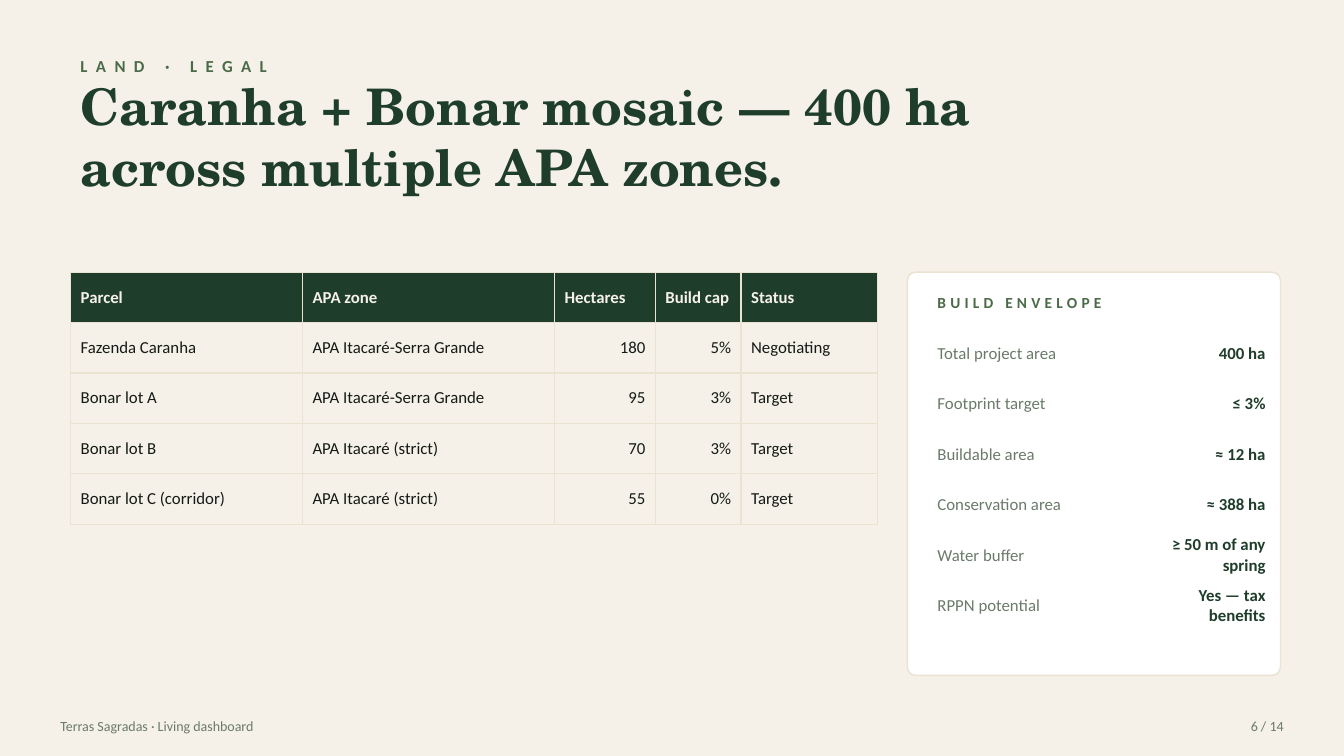
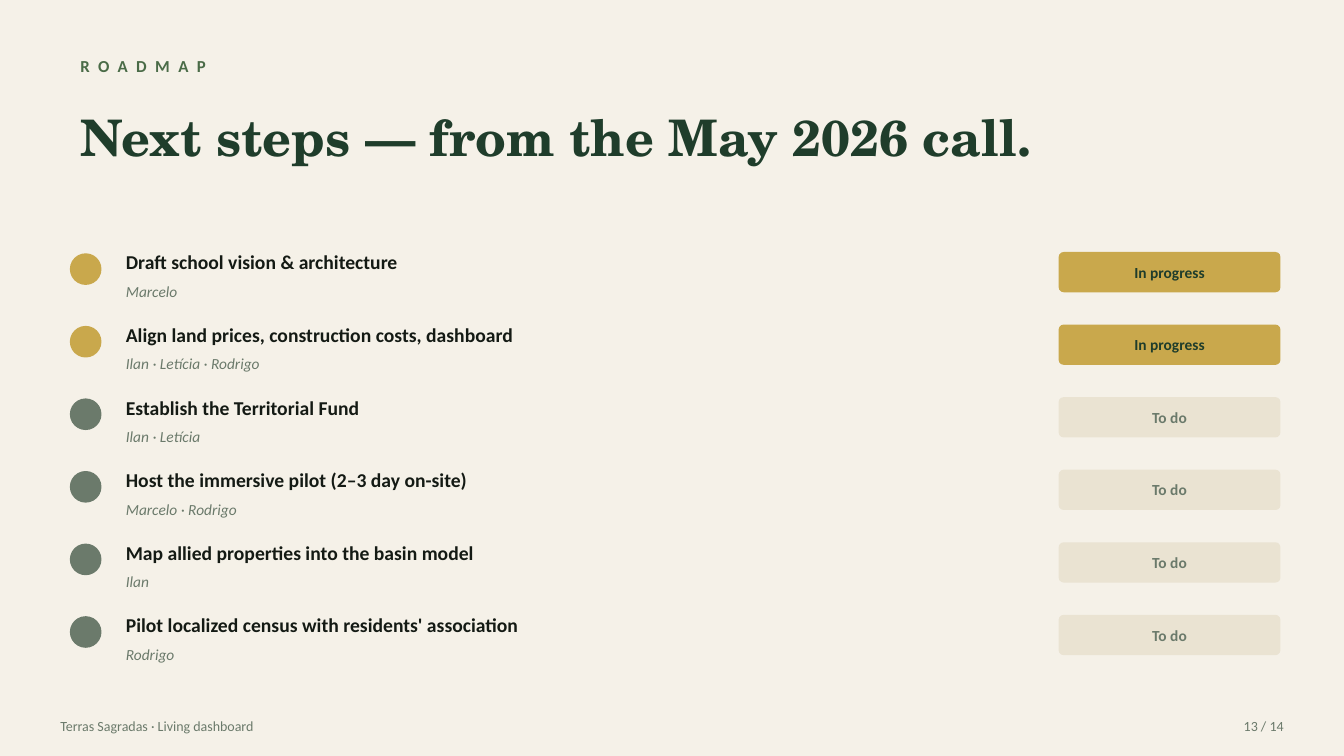
from lxml.etree import SubElement
from pptx import Presentation
from pptx.dml.color import RGBColor
from pptx.enum.shapes import MSO_SHAPE as Shape
from pptx.enum.text import MSO_ANCHOR as Anchor, PP_ALIGN as Align
from pptx.oxml.ns import qn
from pptx.util import Inches, Pt

CREAM, SAND, WHITE = "F5F1E8", "EAE3D2", "FFFFFF"
FOREST, LEAF, SAGE = "1F3D2B", "4A6B47", "6B7A6B"
INK, GOLD = "141A14", "C9A84C"
BODY_FONT, TITLE_FONT = "Calibri", "TeX Gyre Schola"
PAGE_COUNT = 14
LEFT, RIGHT = 0.7, 12.7

PARCEL_WIDTHS = [2.3, 2.5, 1, 0.85, 1.35]
PARCEL_ALIGNS = [Align.LEFT, Align.LEFT, Align.RIGHT, Align.RIGHT, Align.LEFT]
PARCELS = [
    ("Parcel", "APA zone", "Hectares", "Build cap", "Status"),
    ("Fazenda Caranha", "APA Itacaré-Serra Grande", "180", "5%", "Negotiating"),
    ("Bonar lot A", "APA Itacaré-Serra Grande", "95", "3%", "Target"),
    ("Bonar lot B", "APA Itacaré (strict)", "70", "3%", "Target"),
    ("Bonar lot C (corridor)", "APA Itacaré (strict)", "55", "0%", "Target"),
]
ENVELOPE = [
    ("Total project area", "400 ha"),
    ("Footprint target", "≤ 3%"),
    ("Buildable area", "≈ 12 ha"),
    ("Conservation area", "≈ 388 ha"),
    ("Water buffer", "≥ 50 m of any spring"),
    ("RPPN potential", "Yes — tax benefits"),
]
STATUS_COLORS = {
    "In progress": {"dot": GOLD, "pill": GOLD, "label": FOREST},
    "To do": {"dot": SAGE, "pill": SAND, "label": SAGE},
}
STEPS = [
    ("Draft school vision & architecture", "Marcelo", "In progress"),
    ("Align land prices, construction costs, dashboard",
     "Ilan · Letícia · Rodrigo", "In progress"),
    ("Establish the Territorial Fund", "Ilan · Letícia", "To do"),
    ("Host the immersive pilot (2–3 day on-site)", "Marcelo · Rodrigo", "To do"),
    ("Map allied properties into the basin model", "Ilan", "To do"),
    ("Pilot localized census with residents' association", "Rodrigo", "To do"),
]


def rgb(color):
    """Turn a hex string into a colour."""
    return RGBColor.from_string(color)


def paint(target, color):
    """Give a shape, cell or background a solid fill."""
    target.fill.solid()
    target.fill.fore_color.rgb = rgb(color)


def write(frame, text, size=12, color=INK, font=BODY_FONT, bold=False,
          italic=False, align=Align.LEFT, spacing=0):
    """Fill a text frame with one formatted paragraph per line of text."""
    frame.word_wrap = True
    frame.vertical_anchor = Anchor.MIDDLE
    for index, line in enumerate(text.split("\n")):
        paragraph = frame.add_paragraph() if index else frame.paragraphs[0]
        paragraph.alignment = align
        run = paragraph.add_run()
        run.text = line
        run.font.name = font
        run.font.size = Pt(size)
        run.font.bold = bold
        run.font.italic = italic
        run.font.color.rgb = rgb(color)
        if spacing:
            run.font._element.set("spc", str(spacing * 100))


def add_text(slide, box, text, **style):
    """Place a text box given as left, top, width and height."""
    write(slide.shapes.add_textbox(*map(Inches, box)).text_frame, text, **style)


def add_block(slide, kind, box, fill, line=None, radius=None):
    """Place a flat preset shape, with an optional outline and corner ratio."""
    block = slide.shapes.add_shape(kind, *map(Inches, box))
    block.shadow.inherit = False
    paint(block, fill)
    if line:
        block.line.color.rgb = rgb(line)
        block.line.width = Pt(1)
    else:
        block.line.fill.background()
    if radius is not None:
        block.adjustments[0] = radius
    return block


def add_page(deck, section, title, number):
    """Add a slide with its background, section label, title and footer."""
    slide = deck.slides.add_slide(deck.slide_layouts[6])
    paint(slide.background, CREAM)
    add_text(slide, (LEFT, 0.5, 10, 0.3), section, color=LEAF, bold=True, spacing=6)
    add_text(slide, (LEFT, 0.85, 12, 1), title, size=36, color=FOREST,
             font=TITLE_FONT, bold=True)
    add_text(slide, (0.5, 7.05, 8, 0.3), "Terras Sagradas · Living dashboard",
             size=10, color=SAGE)
    add_text(slide, (11.83, 7.05, 1, 0.3), f"{number} / {PAGE_COUNT}",
             size=10, color=SAGE, align=Align.RIGHT)
    return slide


def outline_cell(cell, color):
    """Draw a one-point border on all four sides of a table cell."""
    properties = cell._tc.get_or_add_tcPr()
    for index, side in enumerate(("a:lnL", "a:lnR", "a:lnT", "a:lnB")):
        border = SubElement(properties, qn(side), w=str(Pt(1)))
        solid = SubElement(border, qn("a:solidFill"))
        SubElement(solid, qn("a:srgbClr"), val=color)
        properties.insert(index, border)


def add_parcel_table(slide, left, top, row_height=0.5):
    """Place the table of parcels with a dark heading row."""
    table = slide.shapes.add_table(
        len(PARCELS), len(PARCEL_WIDTHS), Inches(left), Inches(top),
        Inches(sum(PARCEL_WIDTHS)), Inches(row_height * len(PARCELS))).table
    table.horz_banding = False
    for column, width in zip(table.columns, PARCEL_WIDTHS):
        column.width = Inches(width)
    for row, values in enumerate(PARCELS):
        for column, value in enumerate(values):
            cell = table.cell(row, column)
            cell.vertical_anchor = Anchor.MIDDLE
            if row:
                cell.fill.background()
                write(cell.text_frame, value, align=PARCEL_ALIGNS[column])
            else:
                paint(cell, FOREST)
                write(cell.text_frame, value, color=CREAM, bold=True)
            outline_cell(cell, SAND)


def add_envelope_card(slide, left, top, width, height):
    """Place the card that lists the build envelope."""
    add_block(slide, Shape.ROUNDED_RECTANGLE, (left, top, width, height),
              WHITE, line=SAND, radius=0.022)
    add_text(slide, (left + 0.2, top + 0.15, width - 0.4, 0.3), "BUILD ENVELOPE",
             size=11, color=LEAF, bold=True, spacing=3)
    for index, (measure, value) in enumerate(ENVELOPE):
        row_top = top + 0.6 + index * 0.5
        add_text(slide, (left + 0.2, row_top, 2.3, 0.4), measure, color=SAGE)
        add_text(slide, (left + width - 1.3, row_top, 1.25, 0.4), value,
                 color=FOREST, bold=True, align=Align.RIGHT)


def add_step(slide, left, top, width, task, owners, status):
    """Place one roadmap step: dot, task, owners and status pill."""
    colors = STATUS_COLORS[status]
    add_block(slide, Shape.OVAL, (left, top + 0.12, 0.3, 0.3),
              colors["dot"], line=colors["dot"])
    add_text(slide, (left + 0.45, top, 8.5, 0.4), task, size=14, bold=True)
    add_text(slide, (left + 0.45, top + 0.34, 8.5, 0.3), owners, size=11,
             color=SAGE, italic=True)
    pill = add_block(slide, Shape.ROUNDED_RECTANGLE,
                     (left + width - 2.2, top + 0.1, 2.2, 0.4),
                     colors["pill"], radius=0.125)
    write(pill.text_frame, status, size=11, color=colors["label"], bold=True,
          align=Align.CENTER)


def build_land_slide(deck):
    """Build the slide on parcels and the build envelope."""
    slide = add_page(
        deck, "LAND · LEGAL",
        "Caranha + Bonar mosaic — 400 ha\nacross multiple APA zones.", 6)
    add_parcel_table(slide, LEFT, 2.7)
    add_envelope_card(slide, 9, 2.7, RIGHT - 9, 4)


def build_roadmap_slide(deck):
    """Build the slide that lists the next steps."""
    slide = add_page(deck, "ROADMAP", "Next steps — from the May 2026 call.", 13)
    for index, step in enumerate(STEPS):
        add_step(slide, LEFT, 2.4 + index * 0.72, RIGHT - LEFT, *step)


def main():
    """Build and save the presentation."""
    deck = Presentation()
    deck.slide_width, deck.slide_height = Inches(13.33), Inches(7.5)
    build_land_slide(deck)
    build_roadmap_slide(deck)
    deck.save("out.pptx")


if __name__ == "__main__":
    main()
